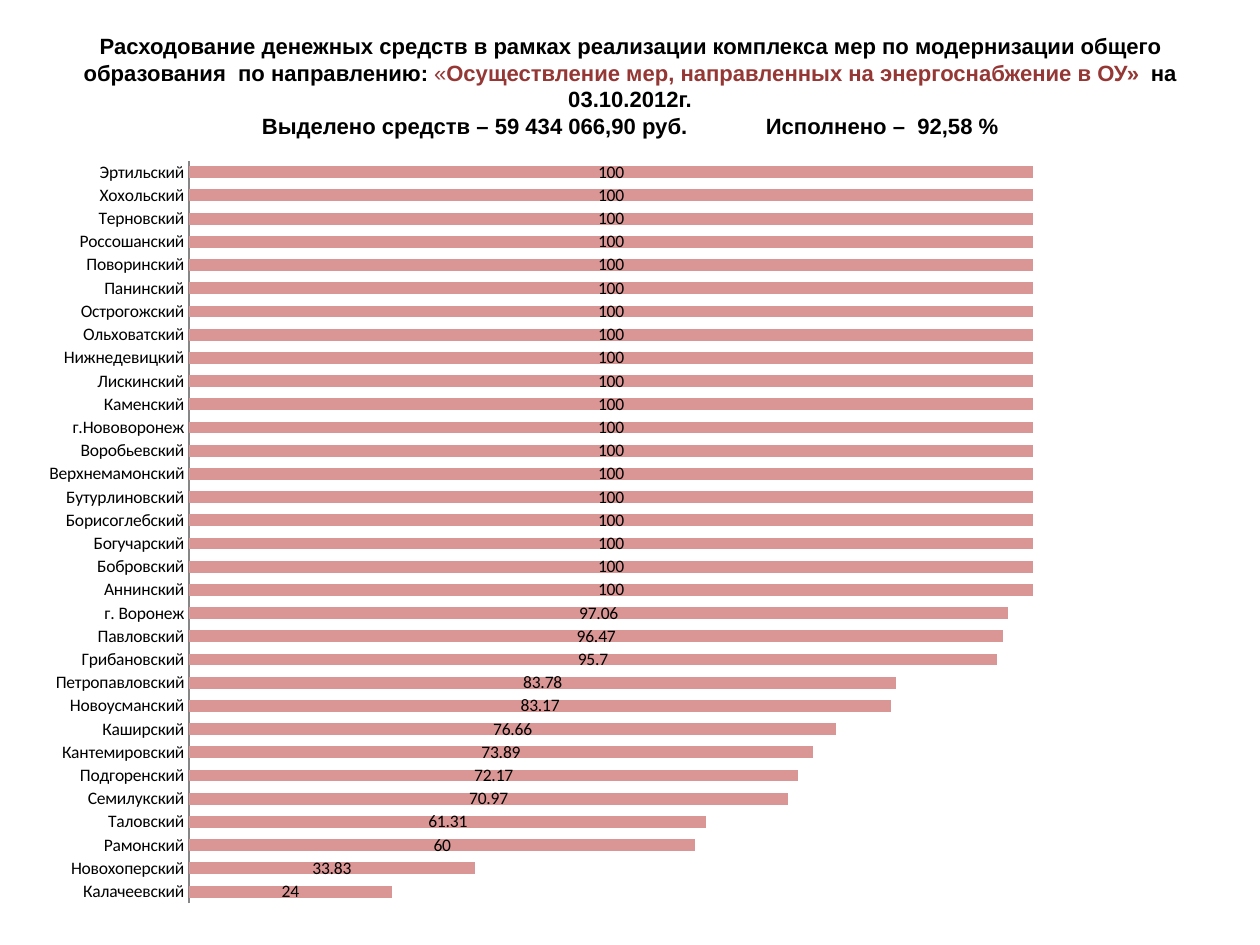
from pptx import Presentation
from pptx import util as u
from pptx.chart.data import CategoryChartData
from pptx.dml.color import RGBColor
from pptx.enum import chart as charts, text

BLACK, RED, BAR, AXIS = "000000", "953735", "D99694", "868686"

# Districts in order of completion, bottom to top
BELOW_FULL = {
    "Калачеевский": 24, "Новохоперский": 33.83, "Рамонский": 60,
    "Таловский": 61.31, "Семилукский": 70.97, "Подгоренский": 72.17,
    "Кантемировский": 73.89, "Каширский": 76.66, "Новоусманский": 83.17,
    "Петропавловский": 83.78, "Грибановский": 95.7, "Павловский": 96.47,
    "г. Воронеж": 97.06,
}
FULL = [
    "Аннинский", "Бобровский", "Богучарский", "Борисоглебский",
    "Бутурлиновский", "Верхнемамонский", "Воробьевский", "г.Нововоронеж",
    "Каменский", "Лискинский", "Нижнедевицкий", "Ольховатский",
    "Острогожский", "Панинский", "Поворинский", "Россошанский",
    "Терновский", "Хохольский", "Эртильский",
]
SPENDING = {**BELOW_FULL, **dict.fromkeys(FULL, 100)}

# Title lines, each a list of (text, colour, bold)
TITLE = [
    [("Расходование денежных средств в рамках реализации комплекса мер по "
      "модернизации общего образования  по направлению: ", BLACK, True),
     ("«", RED, False),
     ("Осуществление мер, направленных на энергоснабжение в ОУ»  ", RED, True),
     ("на 03.10.2012г.", BLACK, True)],
    [("Выделено средств – 59 434 066,90 руб. \t\tИсполнено –  92,58 %",
      BLACK, True)],
]


def color(value):
    return RGBColor.from_string(value)


def apply(target, values):
    for name, value in values.items():
        setattr(target, name, value)


class SlideBuilder:
    title_font = {"name": "Arial", "size": u.Pt(12.6)}
    chart_font = {"name": "Calibri", "size": u.Pt(10)}

    def __init__(self, presentation):
        self.slide = presentation.slides.add_slide(presentation.slide_layouts[5])

    def title(self, lines, left, top, width, height):
        shape = self.slide.shapes.title
        apply(shape, {"left": u.Pt(left), "top": u.Pt(top),
                      "width": u.Pt(width), "height": u.Pt(height)})
        apply(shape.text_frame, {"word_wrap": True,
                                 "auto_size": text.MSO_AUTO_SIZE.NONE,
                                 "vertical_anchor": text.MSO_ANCHOR.MIDDLE})
        paragraph = shape.text_frame.paragraphs[0]
        paragraph.alignment = text.PP_ALIGN.CENTER
        apply(paragraph.font, self.title_font)
        for index, line in enumerate(lines):
            if index:
                paragraph.add_line_break()
            for words, hue, bold in line:
                run = paragraph.add_run()
                run.text = words
                apply(run.font, {**self.title_font, "bold": bold})
                run.font.color.rgb = color(hue)

    def bar_chart(self, values, left, top, width, height):
        data = CategoryChartData()
        data.categories = list(values)
        data.add_series("Series 1", list(values.values()))
        chart = self.slide.shapes.add_chart(
            charts.XL_CHART_TYPE.BAR_STACKED, u.Pt(left), u.Pt(top),
            u.Pt(width), u.Pt(height), data).chart
        apply(chart, {"has_legend": False, "has_title": False})
        apply(chart.font, self.chart_font)
        chart.font.color.rgb = color(BLACK)

        # Axes
        apply(chart.category_axis, {"major_tick_mark": charts.XL_TICK_MARK.NONE,
                                    "has_major_gridlines": False})
        chart.category_axis.format.line.color.rgb = color(AXIS)
        apply(chart.value_axis, {"visible": False, "has_major_gridlines": False,
                                 "minimum_scale": 0, "maximum_scale": 120})

        # Bars and their values
        plot = chart.plots[0]
        apply(plot, {"gap_width": 95, "overlap": 100,
                     "vary_by_categories": False, "has_data_labels": True})
        apply(plot.data_labels, {"show_value": True,
                                 "position": charts.XL_LABEL_POSITION.CENTER})
        fill = plot.series[0].format.fill
        fill.solid()
        fill.fore_color.rgb = color(BAR)


def main():
    presentation = Presentation()
    apply(presentation, {"slide_width": u.Pt(720), "slide_height": u.Pt(540)})
    builder = SlideBuilder(presentation)
    builder.title(TITLE, 8.5, 15, 703, 68)
    builder.bar_chart(SPENDING, 14.5, 83, 686, 442)
    presentation.save("out.pptx")


if __name__ == "__main__":
    main()
